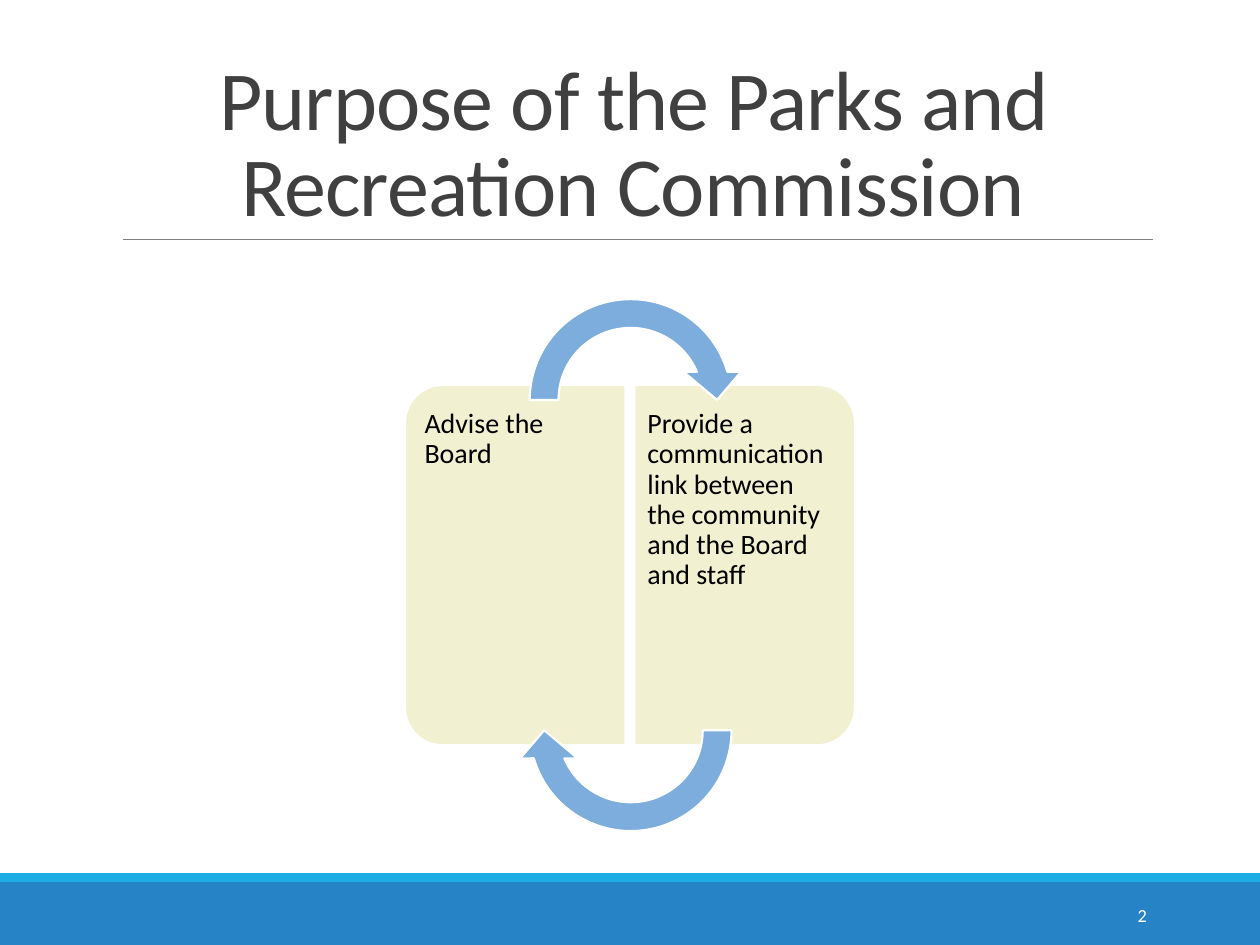
from lxml.etree import SubElement
from pptx import Presentation
from pptx.dml.color import RGBColor
from pptx.enum.shapes import MSO_CONNECTOR, MSO_SHAPE
from pptx.enum.text import MSO_ANCHOR, PP_ALIGN
from pptx.oxml.ns import qn
from pptx.util import Inches, Pt

COLORS = {
    "footer": "2683C6",
    "stripe": "1CADE4",
    "rule": "808080",
    "title": "404040",
    "panel": "F1F0D1",
    "arrow": "7CADDD",
    "white": "FFFFFF",
    "black": "000000",
}


class SlideBuilder:
    """Draws styled elements on the current slide."""

    font = "Calibri"
    outline = 1.25

    def __init__(self, page):
        self.page = page

    def color(self, name):
        return RGBColor.from_string(COLORS[name])

    def shape(self, kind, place, fill, line=None, rotation=0, adjustments=()):
        shape = self.page.shapes.add_shape(kind, *map(Inches, place))
        shape.shadow.inherit = False
        shape.rotation = rotation
        shape.fill.solid()
        shape.fill.fore_color.rgb = self.color(fill)
        if line:
            shape.line.color.rgb = self.color(line)
            shape.line.width = Pt(self.outline)
        else:
            shape.line.fill.background()
        for index, value in enumerate(adjustments):
            shape.adjustments[index] = value

    def rule(self, left, right, top, color, width):
        ends = map(Inches, (left, top, right, top))
        line = self.page.shapes.add_connector(MSO_CONNECTOR.STRAIGHT, *ends)
        line.line.color.rgb = self.color(color)
        line.line.width = Pt(width)
        SubElement(line._element.spPr, qn("a:effectLst"))

    def text(self, words, place, size, color, align=PP_ALIGN.LEFT,
             anchor=MSO_ANCHOR.TOP, line_spacing=1.0,
             insets=(0.1, 0.05, 0.1, 0.05), tracking=0):
        frame = self.page.shapes.add_textbox(*map(Inches, place)).text_frame
        frame.word_wrap = True
        frame.vertical_anchor = anchor
        (frame.margin_left, frame.margin_top,
         frame.margin_right, frame.margin_bottom) = map(Inches, insets)
        para = frame.paragraphs[0]
        para.alignment = align
        para.line_spacing = line_spacing
        para.font.name = self.font
        para.font.size = Pt(size)
        para.font.color.rgb = self.color(color)
        span = para.add_run()
        span.text = words
        if tracking:
            span._r.get_or_add_rPr().set("spc", str(round(tracking * 100)))


def main():
    deck = Presentation()
    deck.slide_width, deck.slide_height = Inches(10), Inches(7.5)
    builder = SlideBuilder(deck.slides.add_slide(deck.slide_layouts[6]))

    builder.shape(MSO_SHAPE.RECTANGLE, (0, 7, 10, 0.5), "footer")
    builder.shape(MSO_SHAPE.RECTANGLE, (0, 6.93, 10, 0.07), "stripe")
    builder.rule(0.98, 9.15, 1.9, "rule", 0.5)
    builder.text("Purpose of the Parks and Recreation Commission",
                 (0.9, 0.31, 8.25, 1.59), 48, "title", PP_ALIGN.CENTER,
                 MSO_ANCHOR.BOTTOM, 0.85, tracking=-0.5)
    builder.text("2", (8.12, 7.06, 1.08, 0.4), 10.5, "white",
                 PP_ALIGN.RIGHT, MSO_ANCHOR.MIDDLE)

    panels = [
        ("Advise the Board", 2.66, 270, 3.3, (0.07, 0.11, 0.1, 0.11)),
        ("Provide a communication link between the community "
         "and the Board and staff", 4.48, 90, 5.04, (0.1, 0.11, 0.07, 0.11)),
    ]
    for words, left, rotation, text_left, insets in panels:
        builder.shape(MSO_SHAPE.ROUND_2_SAME_RECTANGLE,
                      (left, 3.61, 2.86, 1.75), "panel", "white",
                      rotation, (0.17, 0))
        builder.text(words, (text_left, 3.14, 1.66, 2.69), 16, "black",
                     line_spacing=0.9, insets=insets)

    for top, rotation in ((2.26, 0), (4.88, 180)):
        builder.shape(MSO_SHAPE.CIRCULAR_ARROW, (4.09, top, 1.83, 1.83),
                      "arrow", "white", rotation,
                      (0.125, 11.42, 204.58, 108, 0.125))

    deck.save("out.pptx")


if __name__ == "__main__":
    main()
